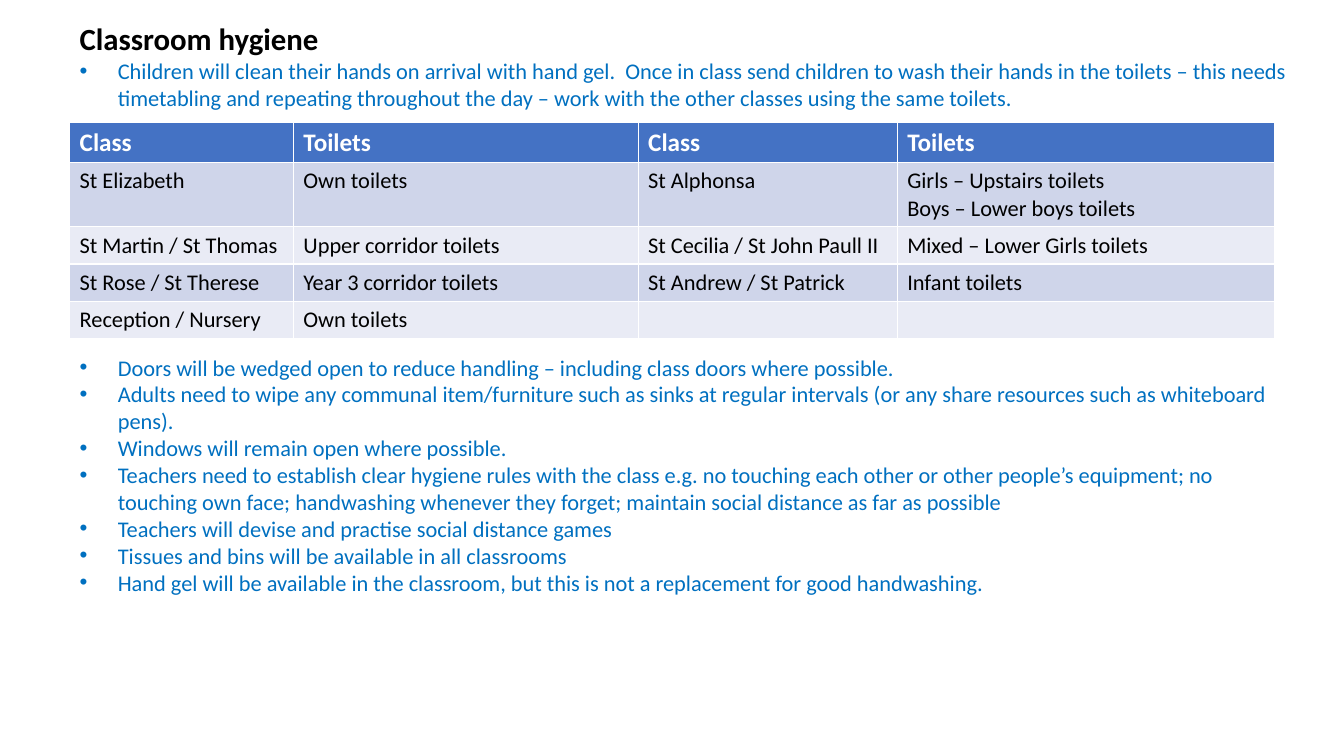
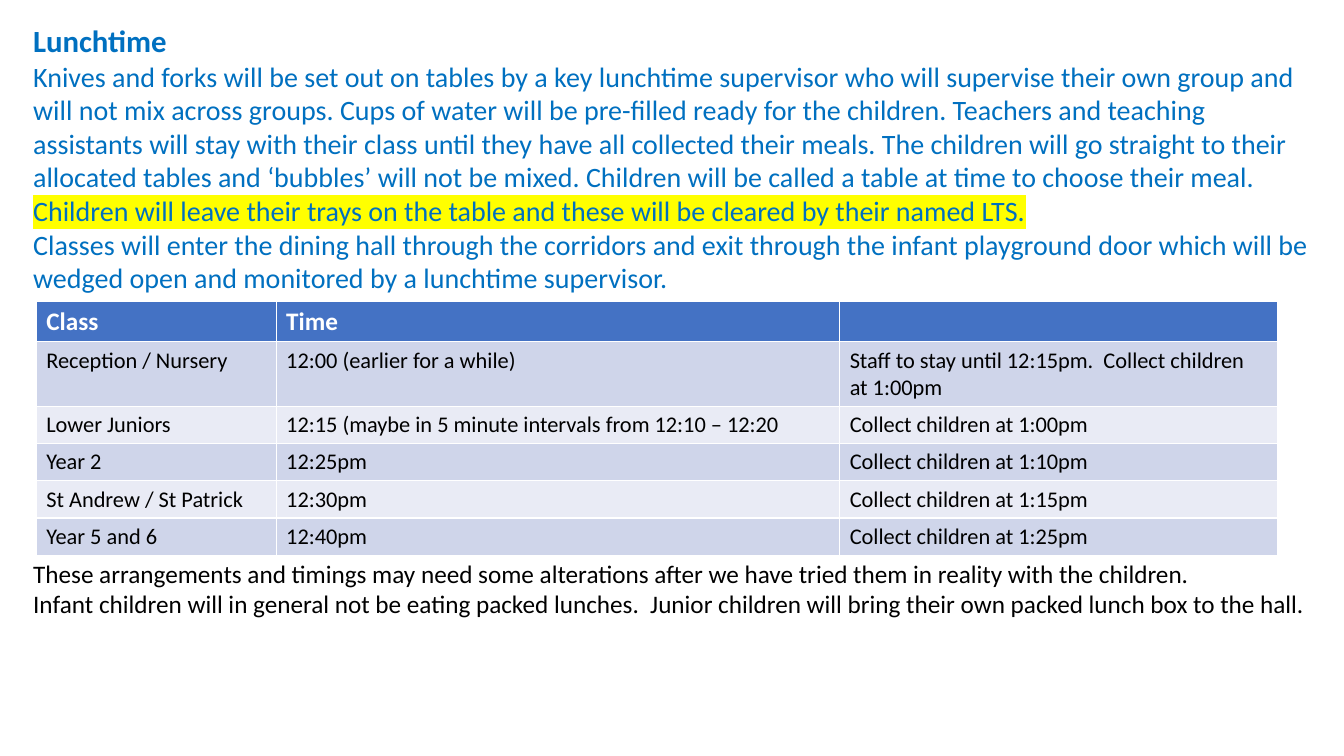
from lxml.etree import SubElement
from pptx import Presentation
from pptx.dml.color import RGBColor
from pptx.oxml.ns import qn
from pptx.util import Inches, Pt

BLACK = RGBColor(0x00, 0x00, 0x00)
WHITE = RGBColor(0xFF, 0xFF, 0xFF)
BLUE = RGBColor(0x00, 0x70, 0xC0)
HEAD = RGBColor(0x44, 0x72, 0xC4)
BANDS = [RGBColor(0xE9, 0xEB, 0xF5), RGBColor(0xCF, 0xD5, 0xEA)]
MARK = "FFFF00"
FACE = "Calibri"
TITLE = 22

deck = Presentation()
deck.slide_width, deck.slide_height = Inches(13.33), Inches(7.5)

# Grid: 100 columns by 100 rows
COL, ROW = deck.slide_width / 100, deck.slide_height / 100
INDENT = int(2.85 * COL)
HIGH, TALL, LOW = 5.33, 8.53, 4.93  # header, two-line and one-line rows


def write(slide, left, top, width, height, lines):
    """Add a text box; each line is (text, size, colour, bold, bullet)."""
    box = slide.shapes.add_textbox(
        int(left * COL), int(top * ROW), int(width * COL), int(height * ROW))
    frame = box.text_frame
    frame.word_wrap = True
    for i, (text, size, color, bold, bullet) in enumerate(lines):
        para = frame.add_paragraph() if i else frame.paragraphs[0]
        para.add_run().text = text
        if bullet:
            props = para._p.get_or_add_pPr()
            props.set("marL", str(INDENT))
            props.set("indent", str(-INDENT))
            SubElement(props, qn("a:buFont")).set("typeface", "Arial")
            SubElement(props, qn("a:buChar")).set("char", "•")
        font = para.font
        font.name, font.size, font.bold = FACE, Pt(size), bold
        font.color.rgb = color
    return frame


def tabulate(slide, left, top, widths, rows):
    """Add a banded table whose second row holds two lines."""
    heights = [HIGH, TALL] + [LOW] * (len(rows) - 2)
    table = slide.shapes.add_table(
        len(rows), len(widths), int(left * COL), int(top * ROW),
        int(sum(widths) * COL), int(sum(heights) * ROW)).table
    for column, width in zip(table.columns, widths):
        column.width = int(width * COL)
    for r, (row, height) in enumerate(zip(rows, heights)):
        table.rows[r].height = int(height * ROW)
        for c, text in enumerate(row):
            cell = table.cell(r, c)
            cell.text = text
            cell.fill.solid()
            cell.fill.fore_color.rgb = BANDS[r % 2] if r else HEAD
            for para in cell.text_frame.paragraphs:
                font = para.font
                font.name, font.size = FACE, Pt(16 if r else 18)
                font.bold = r == 0
                font.color.rgb = BLACK if r else WHITE


# Slide 1: classroom hygiene
slide = deck.slides.add_slide(deck.slide_layouts[6])
left, width = 5.18, 91.65
write(slide, left, 2, width, 14, [
    ("Classroom hygiene", TITLE, BLACK, True, False),
    ("Children will clean their hands on arrival with hand gel.  Once in class "
     "send children to wash their hands in the toilets – this needs timetabling "
     "and repeating throughout the day – work with the other classes using the "
     "same toilets.", 16, BLUE, False, True),
])
tabulate(slide, left, 16.13, [16.65, 25.65, 19.28, 28.05], [
    ("Class", "Toilets", "Class", "Toilets"),
    ("St Elizabeth", "Own toilets", "St Alphonsa",
     "Girls – Upstairs toilets\nBoys – Lower boys toilets"),
    ("St Martin / St Thomas", "Upper corridor toilets",
     "St Cecilia / St John Paull II", "Mixed – Lower Girls toilets"),
    ("St Rose / St Therese", "Year 3 corridor toilets",
     "St Andrew / St Patrick", "Infant toilets"),
    ("Reception / Nursery", "Own toilets", "", ""),
])
rules = [
    "Doors will be wedged open to reduce handling – including class doors where "
    "possible.",
    "Adults need to wipe any communal item/furniture such as sinks at regular "
    "intervals (or any share resources such as whiteboard pens).",
    "Windows will remain open where possible.",
    "Teachers need to establish clear hygiene rules with the class e.g. no "
    "touching each other or other people’s equipment; no touching own face; "
    "handwashing whenever they forget; maintain social distance as far as "
    "possible",
    "Teachers will devise and practise social distance games",
    "Tissues and bins will be available in all classrooms",
    "Hand gel will be available in the classroom, but this is not a replacement "
    "for good handwashing.",
]
write(slide, left, 46.13, width, 34,
      [(rule, 16, BLUE, False, True) for rule in rules])

# Slide 2: lunchtime
slide = deck.slides.add_slide(deck.slide_layouts[6])
left, width = 1.73, 96.45
frame = write(slide, left, 2.27, width, 37.7, [
    ("Lunchtime", TITLE, BLUE, True, False),
    ("Knives and forks will be set out on tables by a key lunchtime supervisor "
     "who will supervise their own group and will not mix across groups. Cups of "
     "water will be pre-filled ready for the children. Teachers and teaching "
     "assistants will stay with their class until they have all collected their "
     "meals. The children will go straight to their allocated tables and "
     "‘bubbles’ will not be mixed. Children will be called a table at time to "
     "choose their meal. ", 20, BLUE, False, False),
    ("Classes will enter the dining hall through the corridors and exit through "
     "the infant playground door which will be wedged open and monitored by a "
     "lunchtime supervisor.", 20, BLUE, False, False),
])

# Highlighted closing sentence
run = frame.paragraphs[1].add_run()
run.text = ("Children will leave their trays on the table and these will be "
            "cleared by their named LTS.")
light = SubElement(run._r.get_or_add_rPr(), qn("a:highlight"))
SubElement(light, qn("a:srgbClr")).set("val", MARK)

tabulate(slide, 2.7, 39.87, [17.85, 41.93, 32.55], [
    ("Class", "Time", ""),
    ("Reception / Nursery", "12:00 (earlier for a while)",
     "Staff to stay until 12:15pm.  Collect children at 1:00pm"),
    ("Lower Juniors", "12:15 (maybe in 5 minute intervals from 12:10 – 12:20",
     "Collect children at 1:00pm"),
    ("Year 2", "12:25pm", "Collect children at 1:10pm"),
    ("St Andrew / St Patrick", "12:30pm", "Collect children at 1:15pm"),
    ("Year 5 and 6", "12:40pm", "Collect children at 1:25pm"),
])
notes = [
    "These arrangements and timings may need some alterations after we have "
    "tried them in reality with the children.",
    "Infant children will in general not be eating packed lunches.  Junior "
    "children will bring their own packed lunch box to the hall.",
]
write(slide, left, 73.2, width, 9.5,
      [(note, 18, BLACK, False, False) for note in notes])

deck.save("out.pptx")
